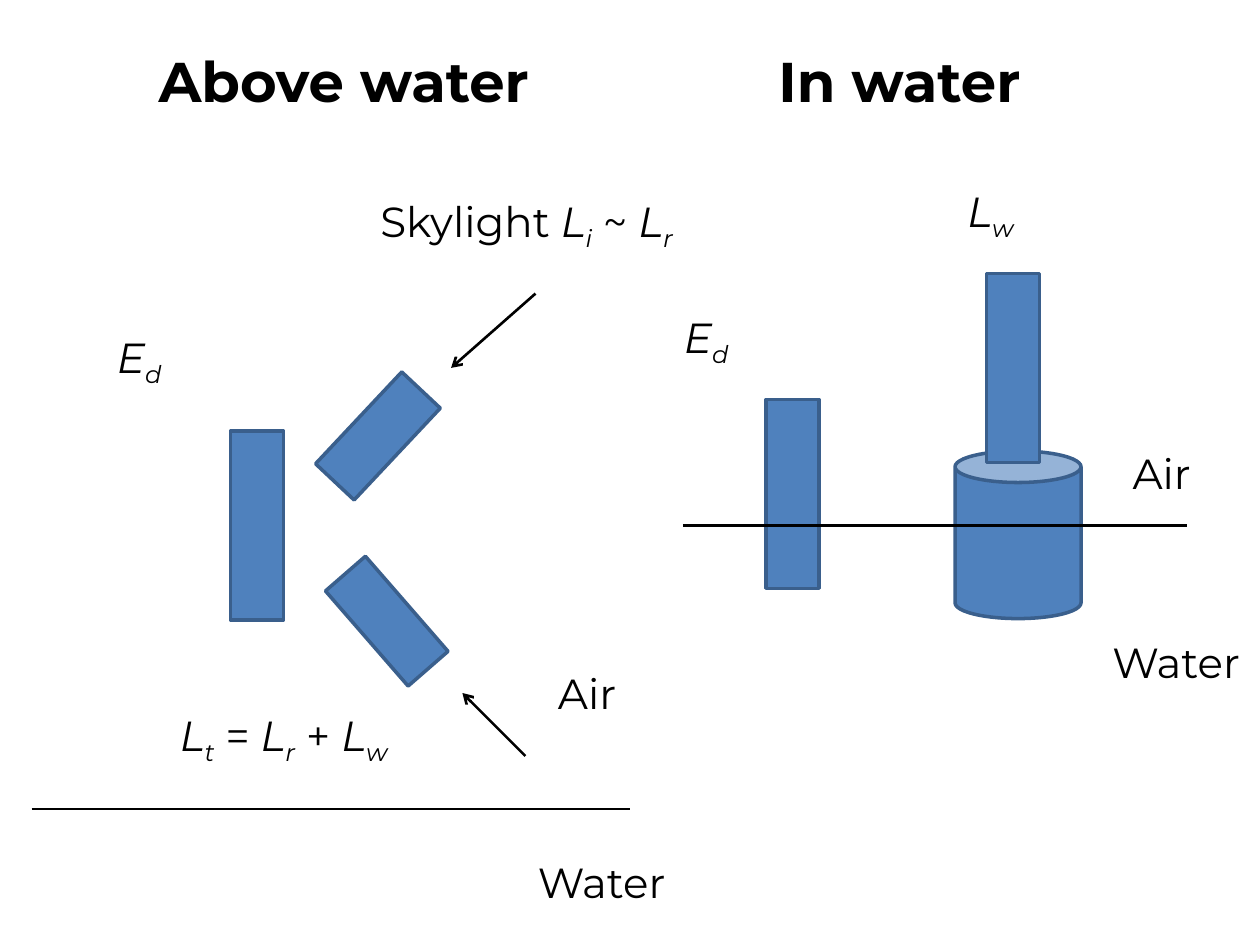
from dataclasses import dataclass

from lxml import etree
from pptx import Presentation, util as u
from pptx.dml.color import RGBColor
from pptx.enum import shapes, text
from pptx.oxml.ns import qn

COLORS = {"ink": "000000", "sensor": "4F81BD", "edge": "3A5F8C"}
FONT = "Montserrat"


@dataclass
class Piece:
    text: str
    italic: bool = False
    subscript: bool = False


@dataclass
class Label:
    pieces: list[Piece]
    left: float
    top: float
    width: float = 2.92
    height: float = 0.67
    size: int = 24
    bold: bool = False
    wrap: bool = True
    anchor: text.MSO_ANCHOR = text.MSO_ANCHOR.TOP


@dataclass
class Body:
    left: float
    top: float
    width: float = 0.42
    height: float = 1.5
    rotation: float = 0
    kind: shapes.MSO_SHAPE = shapes.MSO_SHAPE.RECTANGLE


@dataclass
class Stroke:
    start: tuple[float, float]
    end: tuple[float, float]
    arrow: bool = False


def color(name: str) -> RGBColor:
    return RGBColor.from_string(COLORS[name])


def symbol(letter: str, index: str) -> list[Piece]:
    """Italic quantity with an italic subscript."""
    return [Piece(letter, True), Piece(index, True, True)]


def heading(words: str, left: float) -> Label:
    return Label([Piece(words)], left, 0.25, 4.42, 0.7, size=32, bold=True,
                 anchor=text.MSO_ANCHOR.BOTTOM)


def medium(name: str, left: float, top: float, width: float) -> Label:
    return Label([Piece(name)], left, top, width, 0.5, wrap=False)


def draw_label(slide, label: Label) -> None:
    box = slide.shapes.add_textbox(u.Inches(label.left), u.Inches(label.top),
                                   u.Inches(label.width), u.Inches(label.height))
    frame = box.text_frame
    frame.word_wrap = label.wrap
    frame.vertical_anchor = label.anchor
    for piece in label.pieces:
        run = frame.paragraphs[0].add_run()
        run.text = piece.text
        run.font.name = FONT
        run.font.size = u.Pt(label.size)
        run.font.bold = label.bold
        run.font.italic = piece.italic
        run.font.color.rgb = color("ink")
        if piece.subscript:
            run._r.get_or_add_rPr().set("baseline", "-25000")


def draw_body(slide, body: Body) -> None:
    instrument = slide.shapes.add_shape(
        body.kind, u.Inches(body.left), u.Inches(body.top),
        u.Inches(body.width), u.Inches(body.height))
    instrument.rotation = body.rotation
    instrument.shadow.inherit = False
    instrument.fill.solid()
    instrument.fill.fore_color.rgb = color("sensor")
    instrument.line.color.rgb = color("edge")
    instrument.line.width = u.Pt(2)


def draw_stroke(slide, stroke: Stroke) -> None:
    ends = [u.Inches(value) for value in (*stroke.start, *stroke.end)]
    ray = slide.shapes.add_connector(shapes.MSO_CONNECTOR.STRAIGHT, *ends)
    ray.line.color.rgb = color("ink")
    ray.line.width = u.Pt(1.5)
    if stroke.arrow:
        etree.SubElement(ray.line._get_or_add_ln(), qn("a:tailEnd"), type="arrow")
    etree.SubElement(ray._element.spPr, qn("a:effectLst"))


ABOVE_WATER = [
    heading("Above water", 1.16),
    Label([*symbol("L", "t"), Piece(" = "), *symbol("L", "r"),
           Piece(" + "), *symbol("L", "w")], 1.33, 5.58),
    Body(2.5, 3.25, 1, 0.42, rotation=313.2),
    Stroke((4.25, 2.33), (3.58, 2.92), arrow=True),
    Label([Piece("Skylight "), *symbol("L", "i"), Piece(" ~ "),
           *symbol("L", "r")], 2.92, 1.5),
    Body(1.83, 3.42),
    Label(symbol("E", "d"), 0.83, 2.58),
    Stroke((0.25, 6.42), (5, 6.42)),
    medium("Water", 4.17, 6.75, 1.27),
    medium("Air", 4.33, 5.25, 0.72),
    Body(2.57, 4.72, 1, 0.42, rotation=49),
    Stroke((4.17, 6), (3.67, 5.5), arrow=True),
]

IN_WATER = [
    heading("In water", 6.08),
    Body(6.08, 3.17),
    Body(7.58, 3.58, 1, 1.33, kind=shapes.MSO_SHAPE.CAN),
    Body(7.83, 2.17),
    Label(symbol("L", "w"), 7.58, 1.42, 0.83),
    Stroke((5.42, 4.17), (9.42, 4.17)),
    medium("Water", 8.73, 5, 1.27),
    medium("Air", 8.89, 3.5, 0.72),
    Label(symbol("E", "d"), 5.33, 2.42),
]

DRAW = {Label: draw_label, Body: draw_body, Stroke: draw_stroke}


def main() -> None:
    deck = Presentation()
    deck.slide_width, deck.slide_height = u.Inches(10), u.Inches(7.5)
    slide = deck.slides.add_slide(deck.slide_layouts[6])
    for part in ABOVE_WATER + IN_WATER:
        DRAW[type(part)](slide, part)
    deck.save("out.pptx")


if __name__ == "__main__":
    main()
